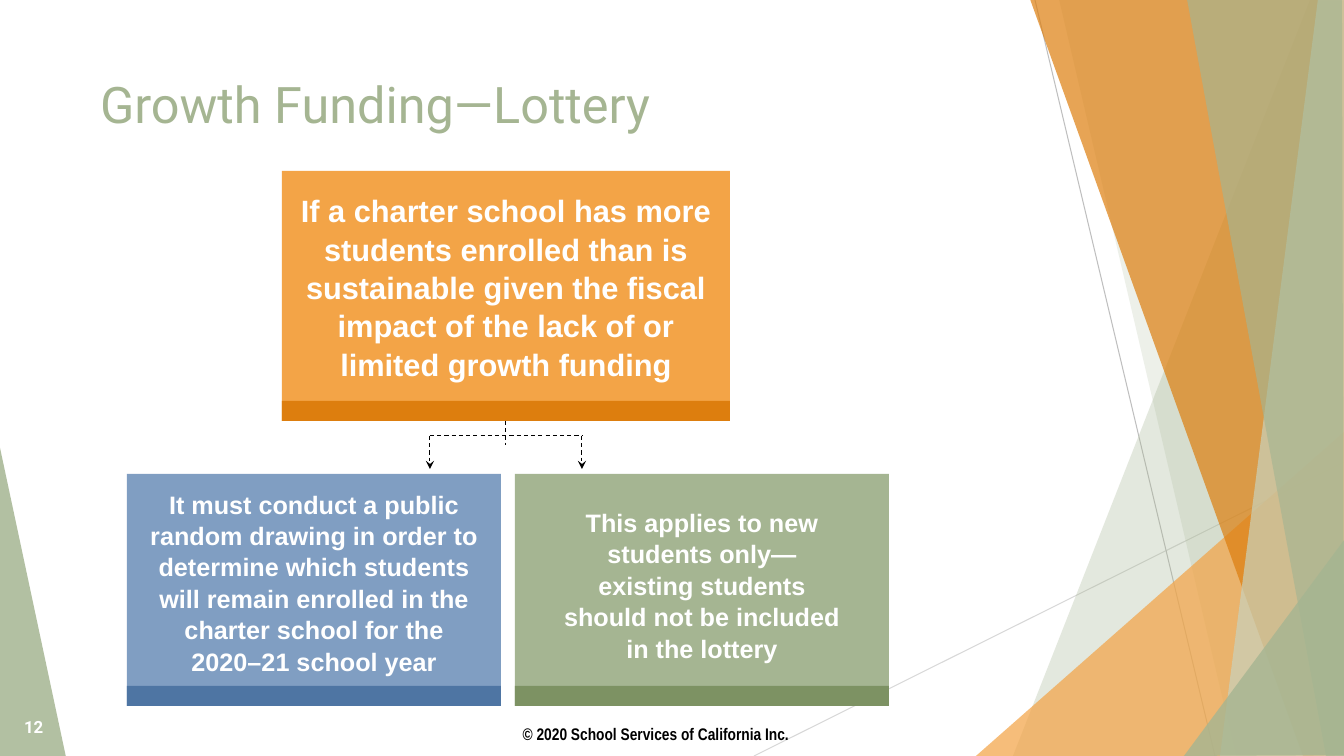
"""Build the lottery slide: one condition leading to two consequences."""
from dataclasses import dataclass

from lxml.etree import SubElement
from pptx import Presentation
from pptx.dml.color import RGBColor
from pptx.enum.dml import MSO_LINE
from pptx.enum.shapes import MSO_CONNECTOR, MSO_SHAPE
from pptx.enum.text import MSO_ANCHOR, PP_ALIGN
from pptx.oxml.ns import qn
from pptx.util import Pt

PX = 914400 / 100.8
WIDTH, HEIGHT = 1344, 756


@dataclass(frozen=True)
class Theme:
    """Colours, fonts and type sizes of the slide."""
    sage: str = "A5B592"
    dark_sage: str = "7D9263"
    pale_sage: str = "C8D2BC"
    orange: str = "F3A447"
    dark_orange: str = "DD7E0E"
    blue: str = "809EC2"
    dark_blue: str = "4E75A3"
    light_grey: str = "D8D8D8"
    grey: str = "BFBFBF"
    black: str = "000000"
    white: str = "FFFFFF"
    heading_font: str = "Roboto"
    body_font: str = "Arial"
    footer_font: str = "Arial Narrow"
    title_size: int = 36
    condition_size: int = 22
    result_size: int = 18
    small_size: int = 12


THEME = Theme()

TITLE = "Growth Funding—Lottery"
COPYRIGHT = "© 2020 School Services of California Inc."
PAGE_NUMBER = "12"

LEFT_WEDGE = (THEME.sage, 85, [(-1, 443), (66, 757), (-1, 756)])
BACKDROP_LINES = [
    ((754, 756), (1346, 461), THEME.light_grey),
    ((1035, 0), (1215, 756), THEME.grey),
]
RIGHT_FACETS = [
    (THEME.sage, 30, [(1310, 0), (1013, 756), (1347, 757), (1346, 1)]),
    (THEME.sage, 20, [(1059, -1), (1236, 756), (1346, 756), (1346, -1)]),
    (THEME.orange, 72, [(976, 756), (1344, 432), (1345, 756)]),
    (THEME.dark_orange, 70, [(1030, -1), (1303, 756), (1346, 755), (1346, -1)]),
    (THEME.pale_sage, 70, [(1318, -1), (1220, 756), (1346, 756), (1345, -1)]),
    (THEME.sage, 65, [(1187, -1), (1326, 756), (1344, 756), (1342, -1)]),
    (THEME.sage, 80, [(1184, 756), (1345, 539), (1346, 755)]),
]
CONDITION = {
    "lines": ["If a charter school has more students enrolled than is sustainable "
              "given the fiscal impact of the lack of or limited growth funding"],
    "area": (282, 171, 448, 250), "text_area": (289, 188, 434, 197),
    "fill": THEME.orange, "edge": THEME.dark_orange, "size": THEME.condition_size,
}
RESULTS = [
    {
        "lines": ["It must conduct a public random drawing in order to determine which "
                  "students will remain enrolled in the charter school for the",
                  "2020–21 school year"],
        "area": (127, 474, 374, 232), "text_area": (139, 485, 350, 194),
        "fill": THEME.blue, "edge": THEME.dark_blue, "size": THEME.result_size,
    },
    {
        "lines": ["This applies to new students only—existing students should not be "
                  "included in the lottery"],
        "area": (515, 474, 374, 232), "text_area": (551, 504, 302, 161),
        "fill": THEME.sage, "edge": THEME.dark_sage, "size": THEME.result_size,
    },
]
EDGE_HEIGHT = 20
FORK_Y, ARROW_Y, STEM_END, FORK_REACH = 436, 469, 445, 76


def emu(*lengths):
    """Turn px lengths into EMU."""
    return [round(length * PX) for length in lengths]


def paint(shape, color, opacity=100):
    """Fill a shape with one colour, without outline or shadow."""
    shape.shadow.inherit = False
    shape.fill.solid()
    shape.fill.fore_color.rgb = RGBColor.from_string(color)
    shape.line.fill.background()
    if opacity < 100:
        tone = shape.fill._xPr.find(qn("a:solidFill"))[0]
        SubElement(tone, qn("a:alpha"), val=str(opacity * 1000))


def add_facet(page, color, opacity, points):
    """Draw a translucent polygon."""
    builder = page.shapes.build_freeform(*points[0], scale=PX)
    builder.add_line_segments(points[1:], close=True)
    paint(builder.convert_to_shape(), color, opacity)


def add_line(page, start, end, color, dashed=False, arrow=False):
    """Draw a thin straight connector."""
    line = page.shapes.add_connector(MSO_CONNECTOR.STRAIGHT, *emu(*start, *end))
    line.line.color.rgb = RGBColor.from_string(color)
    line.line.width = Pt(0.75)
    if dashed:
        line.line.dash_style = MSO_LINE.DASH
    if arrow:
        SubElement(line.line._get_or_add_ln(), qn("a:tailEnd"), type="stealth")
    SubElement(line._element.spPr, qn("a:effectLst"))
    return line


def write(box, lines, *, size, font, color, bold=False, align=PP_ALIGN.LEFT,
          anchor=MSO_ANCHOR.MIDDLE, spacing=1.0):
    """Put formatted paragraphs into a box."""
    frame = box.text_frame
    frame.word_wrap = True
    frame.vertical_anchor = anchor
    frame.margin_left, frame.margin_top, frame.margin_right, frame.margin_bottom = emu(10, 5, 10, 5)
    for index, text in enumerate(lines):
        para = frame.add_paragraph() if index else frame.paragraphs[0]
        para.alignment = align
        para.line_spacing = spacing
        para.space_before = Pt(0)
        span = para.add_run()
        span.text = text
        span.font.size = Pt(size)
        span.font.name = font
        span.font.bold = bold
        span.font.color.rgb = RGBColor.from_string(color)


def add_text(page, area, lines, **style):
    """Add a text box with formatted paragraphs."""
    write(page.shapes.add_textbox(*emu(*area)), lines, **style)


def add_panel(page, panel):
    """Draw a panel with a darker bottom edge and centred text."""
    left, top, width, height = panel["area"]
    body = page.shapes.add_shape(MSO_SHAPE.RECTANGLE, *emu(left, top, width, height))
    paint(body, panel["fill"])
    edge = page.shapes.add_shape(
        MSO_SHAPE.RECTANGLE, *emu(left, top + height - EDGE_HEIGHT, width, EDGE_HEIGHT))
    paint(edge, panel["edge"])
    add_text(page, panel["text_area"], panel["lines"], size=panel["size"],
             font=THEME.body_font, color=THEME.white, bold=True,
             align=PP_ALIGN.CENTER, spacing=1.04)
    return body


def main():
    """Assemble and save the slide."""
    deck = Presentation()
    deck.slide_width, deck.slide_height = emu(WIDTH, HEIGHT)
    page = deck.slides.add_slide(deck.slide_layouts[5])

    add_facet(page, *LEFT_WEDGE)
    for start, end, color in BACKDROP_LINES:
        add_line(page, start, end, color)
    for facet in RIGHT_FACETS:
        add_facet(page, *facet)
    add_text(page, (429, 722, 454, 24), [COPYRIGHT], size=THEME.small_size,
             font=THEME.footer_font, color=THEME.black, bold=True, align=PP_ALIGN.CENTER)

    title = page.shapes.title
    title.left, title.top, title.width, title.height = emu(90, 68, 933, 83)
    write(title, [TITLE], size=THEME.title_size, font=THEME.heading_font,
          color=THEME.sage, anchor=MSO_ANCHOR.TOP)

    condition = add_panel(page, CONDITION)
    left, top, width, height = CONDITION["area"]
    middle = left + width // 2
    stem = add_line(page, (middle, top + height), (middle, STEM_END), THEME.black, dashed=True)
    stem.begin_connect(condition, 2)
    branches = (middle - FORK_REACH, middle + FORK_REACH)
    add_line(page, (branches[0], FORK_Y), (branches[1], FORK_Y), THEME.black, dashed=True)
    for x in branches:
        add_line(page, (x, FORK_Y), (x, ARROW_Y), THEME.black, dashed=True, arrow=True)

    for result in RESULTS:
        add_panel(page, result)
    add_text(page, (14, 707, 76, 40), [PAGE_NUMBER], size=THEME.small_size,
             font=THEME.heading_font, color=THEME.white, bold=True)
    deck.save("out.pptx")


if __name__ == "__main__":
    main()
